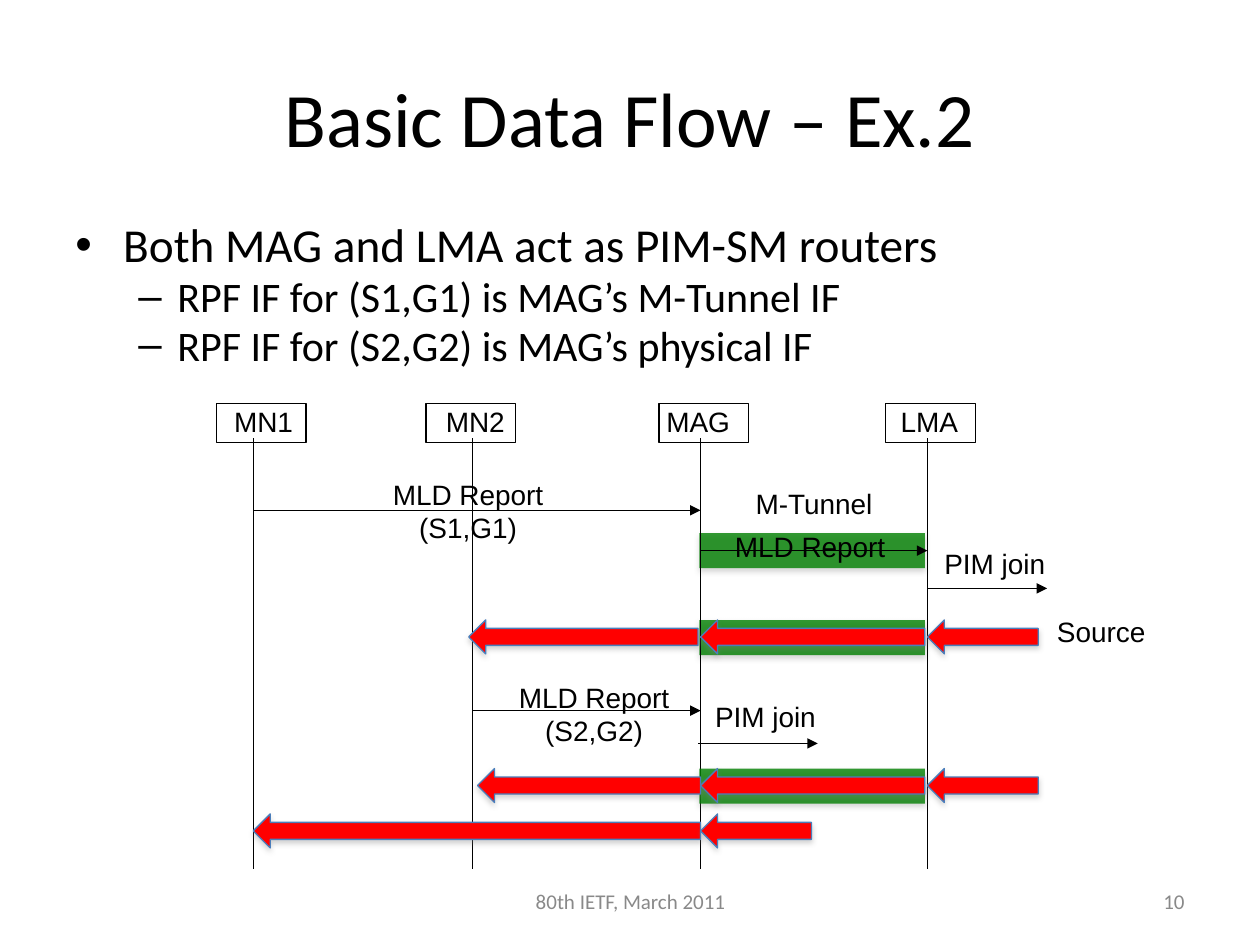
import pptx
import pptx.util
import pptx.dml.color
import pptx.enum.shapes
import pptx.enum.text
from lxml import etree
from pptx.oxml.ns import qn

RGBColor = pptx.dml.color.RGBColor
Inches, Pt = pptx.util.Inches, pptx.util.Pt
ALIGN = pptx.enum.text.PP_ALIGN
ANCHOR = pptx.enum.text.MSO_ANCHOR
SHAPE = pptx.enum.shapes.MSO_SHAPE

BLACK = RGBColor(0x00, 0x00, 0x00)
GRAY = RGBColor(0x89, 0x89, 0x89)
SHADOW = RGBColor(0x80, 0x80, 0x80)
GREEN = RGBColor(0x00, 0x80, 0x00)
RED = RGBColor(0xFF, 0x00, 0x00)
BLUE = RGBColor(0x4A, 0x7E, 0xBB)

# Content
TITLE = "Basic Data Flow – Ex.2"
# text, size, bullet, left margin, hanging indent
BULLETS = [
    ("Both MAG and LMA act as PIM-SM routers", 27, "•", 0.38, 0.38),
    ("RPF IF for (S1,G1) is MAG’s M-Tunnel IF", 24, "–", 0.81, 0.31),
    ("RPF IF for (S2,G2) is MAG’s physical IF", 24, "–", 0.81, 0.31),
]
# name: lifeline x, box left, label left, label width
NODES = {
    "MN1": (2.01, 1.72, 1.76, 0.67),
    "MN2": (3.75, 3.38, 3.44, 0.67),
    "MAG": (5.56, 5.23, 5.19, 0.71),
    "LMA": (7.36, 7.03, 7.05, 0.66),
}
X = {name: node[0] for name, node in NODES.items()}
BOX_W, BOX_H, BOX_TOP = 0.71, 0.31, 3.2
LIFE_TOP, LIFE_END = 3.48, 6.9
HOP, JOIN, FLOW_H = 0.88, 0.95, 0.27

# Signalling: start x, end x, y
MESSAGES = [
    (X["MN1"], X["MAG"], 4.05),
    (X["MAG"], X["LMA"], 4.37),
    (X["LMA"], X["LMA"] + JOIN, 4.67),
    (X["MN2"], X["MAG"], 5.64),
    (X["MAG"] - 0.02, X["MAG"] - 0.02 + JOIN, 5.9),
]
# Lines of text, left, top, width
LABELS = [
    (["MLD Report", "(S1,G1)"], 3.01, 3.74, 1.41),
    (["M-Tunnel"], 5.89, 3.81, 1.14),
    (["MLD Report"], 5.73, 4.15, 1.4),
    (["PIM join"], 7.39, 4.29, 1.01),
    (["Source"], 8.29, 4.83, 0.9),
    (["MLD Report", "(S2,G2)"], 4.01, 5.35, 1.41),
    (["PIM join"], 5.57, 5.5, 1.01),
]
TUNNELS_BELOW, TUNNELS_ABOVE = (5.06, 4.37), (6.24,)
# Data: left, right, top
FLOWS = [
    (X["MAG"], X["LMA"] - 0.02, 4.92),
    (X["LMA"], X["LMA"] + HOP, 4.92),
    (3.72, X["MAG"] - 0.02, 4.92),
    (X["MAG"], X["LMA"] - 0.02, 6.1),
    (X["LMA"], X["LMA"] + HOP, 6.1),
    (3.79, X["MAG"], 6.1),
    (X["MN1"], X["MAG"], 6.46),
    (X["MAG"], X["MAG"] + HOP, 6.46),
]

prs = pptx.Presentation()
prs.slide_width, prs.slide_height = Inches(10), Inches(7.5)
s = prs.slides.add_slide(prs.slide_layouts[6])


def add_text(lines, left, top, width, height, size=16, font="Arial", color=BLACK,
             align=ALIGN.CENTER, anchor=ANCHOR.TOP, wrap=False):
    tf = s.shapes.add_textbox(*map(Inches, (left, top, width, height))).text_frame
    tf.word_wrap, tf.vertical_anchor = wrap, anchor
    for i, line in enumerate(lines):
        p = tf.paragraphs[0] if i == 0 else tf.add_paragraph()
        p.alignment = align
        r = p.add_run()
        r.text = line
        r.font.size, r.font.name, r.font.color.rgb = Pt(size), font, color
    return tf


def add_effects(shape, distance=None, alpha=35):
    effects = etree.SubElement(shape._element.spPr, qn("a:effectLst"))
    if distance:
        shadow = etree.SubElement(effects, qn("a:outerShdw"), blurRad=str(Pt(3)),
                                  dist=str(Pt(distance)), dir="5400000", rotWithShape="0")
        clr = etree.SubElement(shadow, qn("a:srgbClr"), val=str(SHADOW))
        etree.SubElement(clr, qn("a:alpha"), val=str(alpha * 1000))


def add_line(x1, y1, x2, y2, color=BLACK, width=0.75, head=False):
    line = s.shapes.add_connector(pptx.enum.shapes.MSO_CONNECTOR.STRAIGHT,
                                  *map(Inches, (x1, y1, x2, y2)))
    line.line.color.rgb, line.line.width = color, Pt(width)
    if head:
        etree.SubElement(line.line._get_or_add_ln(), qn("a:tailEnd"), type="triangle")
    return line


def add_tunnel(y):
    line = add_line(X["MAG"] - 0.01, y, X["LMA"] - 0.02, y, GREEN, 20)
    clr = line._element.spPr.find(".//" + qn("a:srgbClr"))
    etree.SubElement(clr, qn("a:alpha"), val="80000")
    add_effects(line, 1.6, 38)


def add_block(kind, left, top, width, height, outline=BLACK):
    shape = s.shapes.add_shape(kind, *map(Inches, (left, top, width, height)))
    shape.line.color.rgb, shape.line.width = outline, Pt(0.75)
    return shape


# Tunnels behind the lifelines
for y in TUNNELS_BELOW:
    add_tunnel(y)

# Title and bullets
add_text([TITLE], 0.5, 0.3, 9, 1.25, size=44, font="Calibri", anchor=ANCHOR.MIDDLE, wrap=True)
tf = add_text([b[0] for b in BULLETS], 0.5, 1.75, 9, 1.27, font="Calibri",
              align=ALIGN.LEFT, wrap=True)
for p, (_, size, bullet, margin, hang) in zip(tf.paragraphs, BULLETS):
    p.runs[0].font.size = Pt(size)
    p.line_spacing, p.space_before = 0.8, Pt(size * 0.2)
    pPr = p._p.get_or_add_pPr()
    pPr.set("marL", str(Inches(margin)))
    pPr.set("indent", str(-Inches(hang)))
    etree.SubElement(pPr, qn("a:buFont"), typeface="Arial")
    etree.SubElement(pPr, qn("a:buChar"), char=bullet)

# Footer
footer = dict(size=12, font="Calibri", color=GRAY, anchor=ANCHOR.MIDDLE, wrap=True)
add_text(["80th IETF, March 2011"], 3.42, 6.95, 3.17, 0.4, **footer)
add_text(["10"], 7.17, 6.95, 2.33, 0.4, align=ALIGN.RIGHT, **footer)

# Nodes and lifelines
for name, (x, box_left, label_left, label_w) in NODES.items():
    box = add_block(SHAPE.RECTANGLE, box_left, BOX_TOP, BOX_W, BOX_H)
    box.fill.background()
    box.shadow.inherit = False
    add_text([name], label_left, BOX_TOP - 0.04, label_w, 0.37, align=ALIGN.LEFT)
    add_effects(add_line(x, LIFE_TOP, x, LIFE_END))

# Messages and their labels
for lines, left, top, width in LABELS:
    add_text(lines, left, top, width, 0.1 + 0.27 * len(lines))
for start, end, y in MESSAGES:
    add_effects(add_line(start, y, end, y, head=True))

# Data flows
for y in TUNNELS_ABOVE:
    add_tunnel(y)
for left, right, top in FLOWS:
    arrow = add_block(SHAPE.LEFT_ARROW, left, top, right - left, FLOW_H, BLUE)
    arrow.fill.solid()
    arrow.fill.fore_color.rgb = RED
    add_effects(arrow, 1.8)

prs.save("out.pptx")
